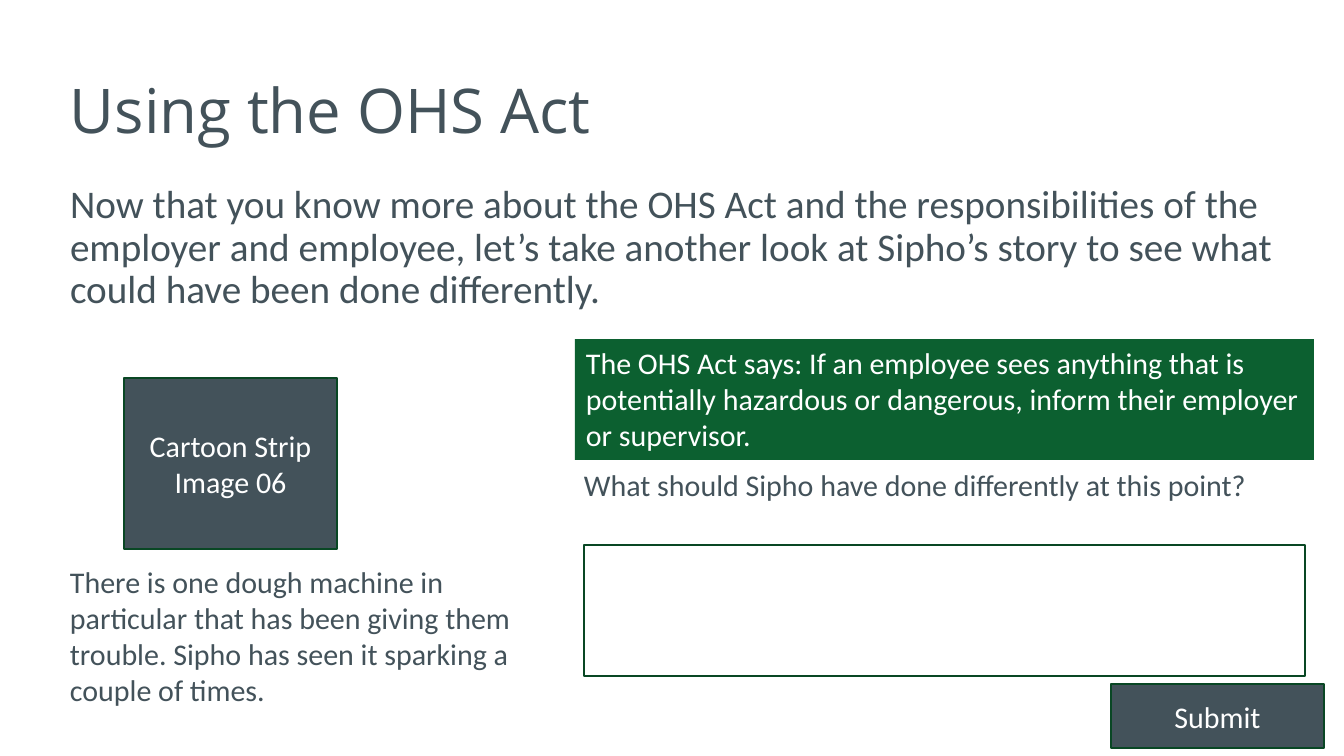
from dataclasses import dataclass
from typing import Optional

from pptx import Presentation
from pptx.dml.color import RGBColor
from pptx.enum.shapes import MSO_SHAPE
from pptx.enum.text import MSO_ANCHOR, PP_ALIGN
from pptx.util import Pt

EMU_PER_PX = 7620  # 120 px to the inch
SLATE, GREEN, DARK_GREEN, WHITE = "43525A", "0C6030", "094724", "FFFFFF"


@dataclass
class TextBlock:
    text: str
    left: int
    top: int
    width: int
    height: int
    size: float = 18
    font: str = "Calibri"
    anchor: MSO_ANCHOR = MSO_ANCHOR.TOP
    line_spacing: Optional[float] = None
    space_before: float = 0


@dataclass
class Panel:
    left: int
    top: int
    width: int
    height: int
    text: str = ""
    fill: Optional[str] = None
    line: Optional[str] = DARK_GREEN
    align: PP_ALIGN = PP_ALIGN.CENTER
    anchor: MSO_ANCHOR = MSO_ANCHOR.MIDDLE


def px(length: int) -> int:
    return length * EMU_PER_PX


def paint(target, color: str) -> None:
    """Set a fill, or a font or line colour, from a hex string."""
    if hasattr(target, "solid"):
        target.solid()
        target = target.fore_color
    else:
        target = target.color
    target.rgb = RGBColor.from_string(color)


def write(box, text: str, *, size: float = 18, font: str = "Calibri",
          color: str = SLATE, align: PP_ALIGN = PP_ALIGN.LEFT,
          anchor: MSO_ANCHOR = MSO_ANCHOR.TOP,
          line_spacing: Optional[float] = None, space_before: float = 0) -> None:
    frame = box.text_frame
    frame.word_wrap = True
    frame.vertical_anchor = anchor
    frame.margin_left = frame.margin_right = px(11)
    frame.margin_top = frame.margin_bottom = px(6)
    para = frame.paragraphs[0]
    para.alignment = align
    para.line_spacing = line_spacing
    para.space_before = Pt(space_before)
    span = para.add_run()
    span.text = text
    span.font.size = Pt(size)
    span.font.name = font
    paint(span.font, color)


def draw_text(page, block: TextBlock) -> None:
    box = page.shapes.add_textbox(
        px(block.left), px(block.top), px(block.width), px(block.height))
    write(box, block.text, size=block.size, font=block.font, anchor=block.anchor,
          line_spacing=block.line_spacing, space_before=block.space_before)


def draw_panel(page, panel: Panel) -> None:
    box = page.shapes.add_shape(
        MSO_SHAPE.RECTANGLE,
        px(panel.left), px(panel.top), px(panel.width), px(panel.height))
    box.shadow.inherit = False
    if panel.fill:
        paint(box.fill, panel.fill)
    else:
        box.fill.background()
    if panel.line:
        paint(box.line, panel.line)
        box.line.width = Pt(1)
    else:
        box.line.fill.background()
    if panel.text:
        write(box, panel.text, color=WHITE, align=panel.align, anchor=panel.anchor)


TEXT_BLOCKS = [
    # Title and introduction
    TextBlock("Using the OHS Act", 59, 41, 1159, 146, size=37, font="Open Sans",
              anchor=MSO_ANCHOR.MIDDLE, line_spacing=0.9),
    TextBlock("Now that you know more about the OHS Act and the responsibilities "
              "of the employer and employee, let’s take another look at Sipho’s "
              "story to see what could have been done differently.",
              59, 179, 1228, 124, size=23.5, line_spacing=0.9, space_before=8.4),
    # Story caption and question
    TextBlock("There is one dough machine in particular that has been giving them "
              "trouble. Sipho has seen it sparking a couple of times.",
              59, 558, 497, 157),
    TextBlock("What should Sipho have done differently at this point?",
              573, 461, 744, 48),
]

PANELS = [
    # Cartoon placeholder, submit button and answer field
    Panel(124, 378, 213, 171, "Cartoon Strip Image 06", fill=SLATE),
    Panel(1111, 684, 213, 64, "Submit", fill=SLATE),
    Panel(584, 545, 721, 131),
    # Quotation from the act
    Panel(575, 339, 739, 121,
          "The OHS Act says: If an employee sees anything that is potentially "
          "hazardous or dangerous, inform their employer or supervisor.",
          fill=GREEN, line=None, align=PP_ALIGN.LEFT, anchor=MSO_ANCHOR.TOP),
]


def main() -> None:
    deck = Presentation()
    deck.slide_width, deck.slide_height = px(1344), px(756)
    page = deck.slides.add_slide(deck.slide_layouts[6])
    paint(page.background.fill, WHITE)
    for block in TEXT_BLOCKS:
        draw_text(page, block)
    for panel in PANELS:
        draw_panel(page, panel)
    deck.save("out.pptx")


if __name__ == "__main__":
    main()
